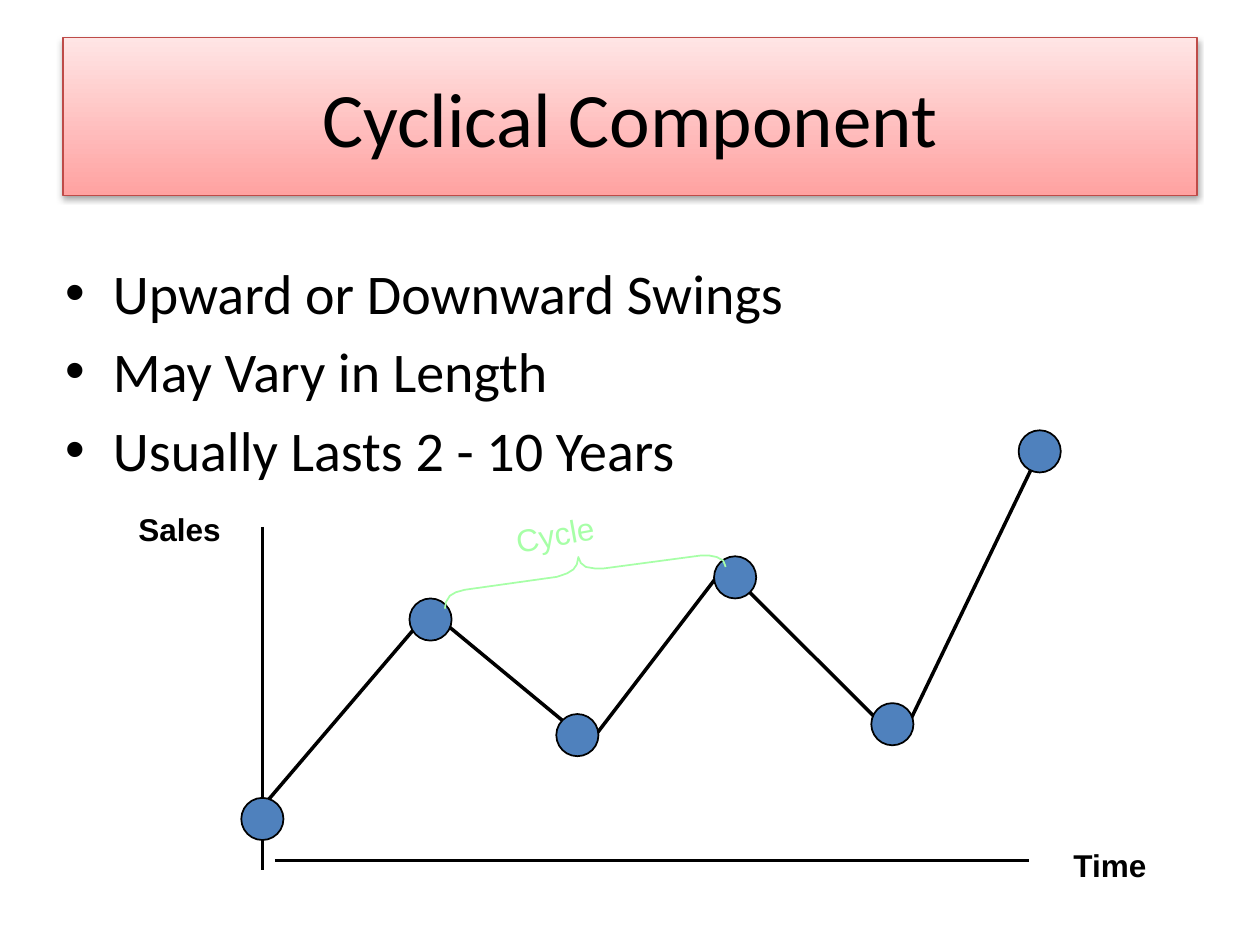
from dataclasses import dataclass

from lxml import etree
from pptx import Presentation
from pptx.dml.color import RGBColor
from pptx.enum.shapes import MSO_CONNECTOR, MSO_SHAPE
from pptx.enum.text import MSO_ANCHOR, PP_ALIGN
from pptx.oxml import parse_xml
from pptx.oxml.ns import nsdecls, qn
from pptx.util import Cm, Pt

STRAIGHT = MSO_CONNECTOR.STRAIGHT
OVAL = MSO_SHAPE.OVAL
MIDDLE = MSO_ANCHOR.MIDDLE
CENTER = PP_ALIGN.CENTER


@dataclass(frozen=True)
class Theme:
    """Colours, fonts and sizes of the slide."""
    ink: str = "000000"
    dot: str = "4F81BD"
    cycle: str = "A7FFA7"
    title_low: str = "FFA2A1"
    title_high: str = "FFE5E5"
    title_line: str = "BE4B48"
    text_font: str = "Calibri"
    label_font: str = "Arial"
    title_size: int = 44
    body_size: int = 32
    label_size: int = 18
    thick: int = 2
    thin: int = 1


THEME = Theme()
BULLETS = ["Upward or Downward Swings", "May Vary in Length", "Usually Lasts 2 - 10 Years"]
DOT_SIZE = 0.85
DOTS = [(2.75, 8.01), (6.14, 3.99), (9.1, 6.32), (12.28, 3.14), (15.45, 6.1), (18.42, 0.6)]
AXES = [((2.75, 2.12), (2.75, 9.03)), ((3, 8.85), (18.21, 8.85))]
SWINGS = [
    ((2.54, 8.01), (6.14, 3.79)),
    ((6.35, 4), (8.89, 6.1)),
    ((9.32, 6.51), (12.04, 2.96)),
    ((12.52, 3.39), (15.24, 6.1)),
    ((15.67, 6.31), (18.42, 0.6)),
]
BRACE = [
    (12.09, 2.93), (12.04, 2.8), (11.91, 2.73), (11.76, 2.7), (11.58, 2.7),
    (9.63, 2.96), (9.45, 2.96), (9.27, 2.93), (9.17, 2.85), (9.12, 2.73),
    (9.09, 2.88), (9.02, 2.98), (8.89, 3.06), (8.69, 3.13),
    (6.83, 3.39), (6.65, 3.44), (6.53, 3.51), (6.45, 3.64), (6.43, 3.77),
]


def place(sp, box):
    """Move and size a shape to a box in centimetres."""
    sp.left, sp.top, sp.width, sp.height = (Cm(v) for v in box)


def add_run(p, text, font, size, color, bold=False):
    """Add one formatted run to a paragraph."""
    r = p.add_run()
    r.text = text
    r.font.name, r.font.size, r.font.bold = font, Pt(size), bold
    r.font.color.rgb = RGBColor.from_string(color)


def set_line(sp, color, width):
    """Give a shape a solid outline."""
    sp.line.color.rgb = RGBColor.from_string(color)
    sp.line.width = Pt(width)


def add_title(sp, box, text):
    """Format the title placeholder as a shaded banner."""
    place(sp, box)
    sp.fill.gradient()
    sp.fill.gradient_angle = 90
    for stop, color in zip(sp.fill.gradient_stops, (THEME.title_low, THEME.title_high)):
        stop.color.rgb = RGBColor.from_string(color)
    set_line(sp, THEME.title_line, 0.75)
    sp._element.spPr.append(parse_xml(
        f'<a:effectLst {nsdecls("a")}><a:outerShdw blurRad="40000" dist="23000" '
        'dir="5400000" rotWithShape="0"><a:srgbClr val="000000">'
        '<a:alpha val="35000"/></a:srgbClr></a:outerShdw></a:effectLst>'))
    tf = sp.text_frame
    tf.vertical_anchor = MIDDLE
    p = tf.paragraphs[0]
    p.alignment = CENTER
    add_run(p, text, THEME.text_font, THEME.title_size, THEME.ink)


def add_bullets(sp, box, items):
    """Fill the body placeholder with a bulleted list."""
    place(sp, box)
    tf = sp.text_frame
    for i, item in enumerate(items):
        p = tf.add_paragraph() if i else tf.paragraphs[0]
        add_run(p, item, THEME.text_font, THEME.body_size, THEME.ink)


def add_line(shapes, x, y, start, end):
    """Draw a straight line between two points offset by x and y."""
    (x1, y1), (x2, y2) = start, end
    ln = shapes.add_connector(STRAIGHT, Cm(x + x1), Cm(y + y1), Cm(x + x2), Cm(y + y2))
    set_line(ln, THEME.ink, THEME.thick)
    etree.SubElement(ln._element.spPr, qn("a:effectLst"))


def add_label(shapes, box, text, color, bold=True, rotation=0):
    """Add a text label to the diagram."""
    sp = shapes.add_textbox(*(Cm(v) for v in box))
    sp.rotation = rotation
    tf = sp.text_frame
    tf.word_wrap = True
    add_run(tf.paragraphs[0], text, THEME.label_font, THEME.label_size, color, bold)


def add_brace(shapes, x, y):
    """Draw the brace that spans one cycle."""
    points = [(Cm(x + px), Cm(y + py)) for px, py in BRACE]
    fb = shapes.build_freeform(*points[0])
    fb.add_line_segments(points[1:], close=False)
    sp = fb.convert_to_shape()
    sp.shadow.inherit = False
    sp.fill.background()
    set_line(sp, THEME.cycle, THEME.thin)


def add_diagram(shapes, x, y):
    """Draw the sales cycle diagram from its top left corner."""
    for start, end in AXES + SWINGS:
        add_line(shapes, x, y, start, end)
    add_label(shapes, (x, y + 1.66, 4, 1.27), "Sales", THEME.ink)
    add_label(shapes, (x + 18.85, y + 8.44, 4, 1.27), "Time", THEME.ink)
    for cx, cy in DOTS:
        box = (x + cx - DOT_SIZE / 2, y + cy - DOT_SIZE / 2, DOT_SIZE, DOT_SIZE)
        sp = shapes.add_shape(OVAL, *(Cm(v) for v in box))
        sp.shadow.inherit = False
        sp.fill.solid()
        sp.fill.fore_color.rgb = RGBColor.from_string(THEME.dot)
        set_line(sp, THEME.ink, THEME.thin)
    add_brace(shapes, x, y)
    add_label(shapes, (x + 7.62, y + 1.66, 3.18, 1.27), "Cycle", THEME.cycle, False, 350)


def main():
    """Build and save the slide."""
    prs = Presentation()
    prs.slide_width, prs.slide_height = Cm(25.4), Cm(19.05)
    s = prs.slides.add_slide(prs.slide_layouts[1])
    add_title(s.shapes.title, (1.27, 0.76, 22.86, 3.18), "Cyclical Component")
    add_bullets(s.placeholders[1], (1.07, 5.08, 24.33, 11.43), BULLETS)
    add_diagram(s.shapes, 2.54, 8.5)
    prs.save("out.pptx")


if __name__ == "__main__":
    main()
